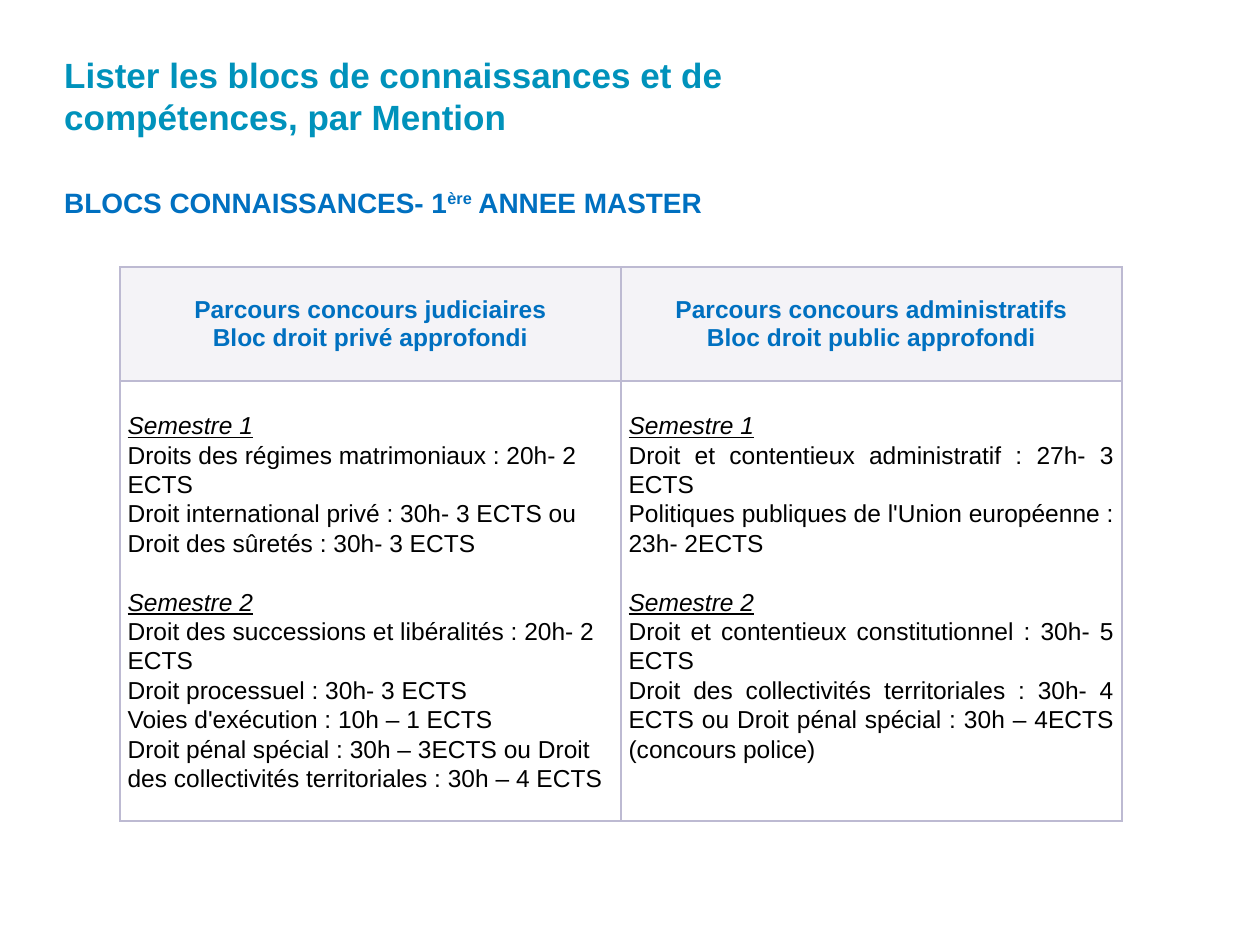
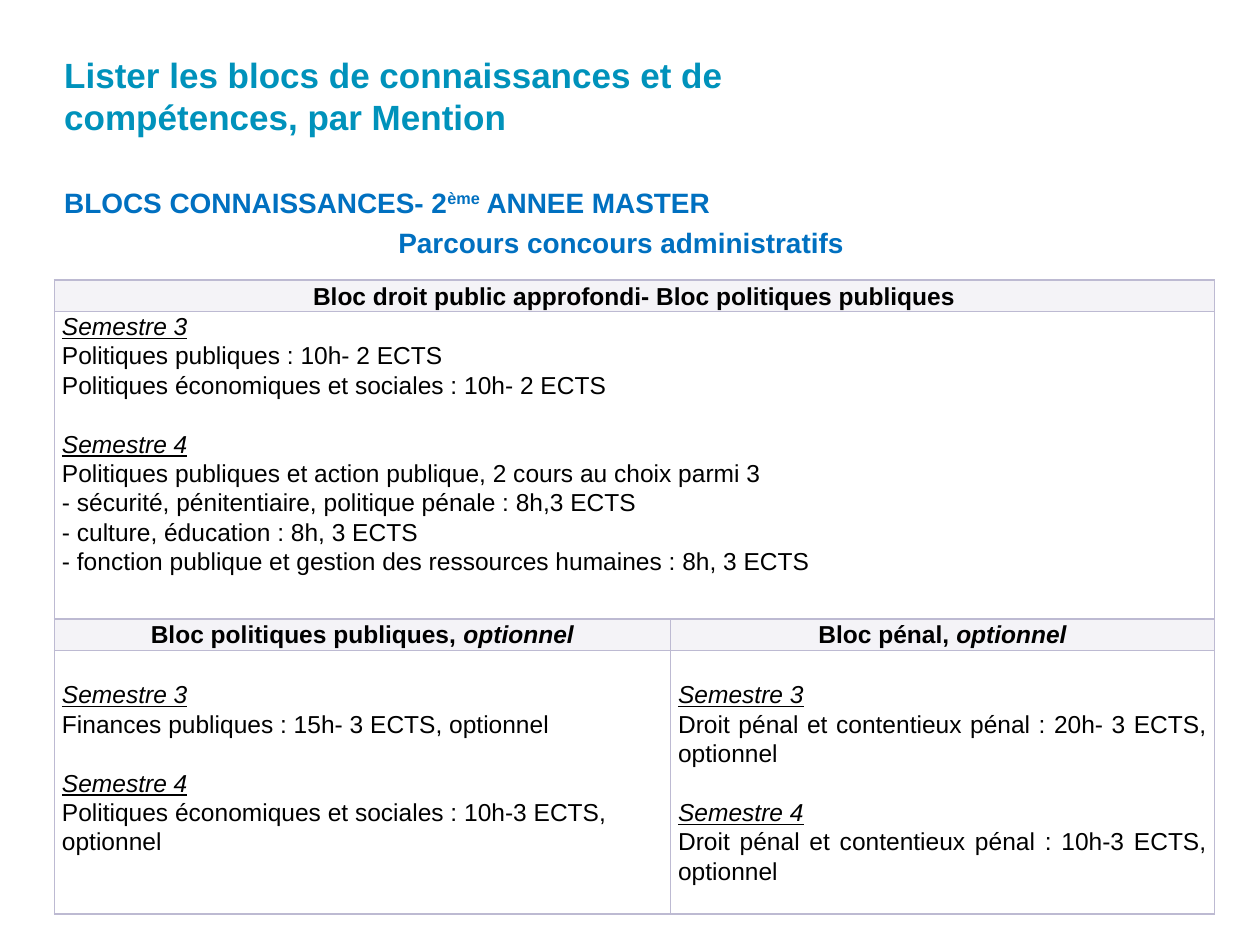
from lxml import etree
from pptx import Presentation
from pptx.dml.color import RGBColor
from pptx.enum.text import MSO_ANCHOR as Anchor, PP_ALIGN as Align
from pptx.oxml.ns import qn
from pptx.util import Pt

FONT = "Arial"
TEAL, BLUE, BLACK = "0092BB", "0070C0", "000000"
PALE, WHITE, EDGE = "F4F3F7", "FFFFFF", "BDBAD2"
LEFT, LINE, INSET = 36.7, 16.8, 4.4
TITLE = "Lister les blocs de connaissances et de compétences, par Mention"


def tint(code):
    """Turn a hex string into a colour."""
    return RGBColor.from_string(code)


def add_run(para, text, size, color, style=""):
    """Add one run; style letters are b, i, u and ^ for superscript."""
    run = para.add_run()
    run.text = text
    font = run.font
    font.name, font.size = FONT, Pt(size)
    font.color.rgb = tint(color)
    font.bold, font.italic, font.underline = (key in style for key in "biu")
    if "^" in style:
        run._r.get_or_add_rPr().set("baseline", "30000")


def add_para(frame, runs, size, color, align=Align.LEFT, gap=0, pitch=None):
    """Fill the first free paragraph of a frame with (text, style) runs."""
    first = frame.paragraphs[0]
    para = frame.add_paragraph() if first.runs else first
    para.alignment = align
    para.space_before = Pt(gap)
    if pitch:
        para.line_spacing = pitch
    for text, style in runs:
        add_run(para, text, size, color, style)


def strip(frame):
    """Make a frame wrap with no insets."""
    frame.word_wrap = True
    frame.margin_left = frame.margin_right = 0
    frame.margin_top = frame.margin_bottom = 0


def add_page(deck, year, mark, path_name=None):
    """Add a slide with the shared title and its year heading."""
    page = deck.slides.add_slide(deck.slide_layouts[5])
    title = page.shapes.title
    title.left, title.top, title.width, title.height = map(Pt, (LEFT, 3.6, 465, 102.2))
    strip(title.text_frame)
    title.text_frame.vertical_anchor = Anchor.MIDDLE
    add_para(title.text_frame, [(TITLE, "b")], 20, TEAL)
    box = page.shapes.add_textbox(*map(Pt, (LEFT, 105.8, 636.5, 430.5)))
    strip(box.text_frame)
    heading = [("BLOCS CONNAISSANCES- " + year, "b"), (mark, "b^"), (" ANNEE MASTER", "b")]
    add_para(box.text_frame, heading, 16, BLUE)
    if path_name:
        add_para(box.text_frame, [(path_name, "b")], 16, BLUE, Align.CENTER, 3.7)
    return page


def add_grid(page, left, top, cols, rows):
    """Add a bordered table with the given column widths and row heights."""
    frame = page.shapes.add_table(len(rows), len(cols), *map(Pt, (left, top, sum(cols), sum(rows))))
    grid = frame.table
    grid.first_row = grid.horz_banding = False
    for col, width in zip(grid.columns, cols):
        col.width = Pt(width)
    for row, height in zip(grid.rows, rows):
        row.height = Pt(height)
        for cell in row.cells:
            set_edges(cell)
    return grid


def set_edges(cell):
    """Draw the four borders of a cell."""
    props = cell._tc.get_or_add_tcPr()
    for side in ("lnL", "lnR", "lnT", "lnB"):
        line = etree.SubElement(props, qn("a:" + side), w=str(Pt(1)))
        fill = etree.SubElement(line, qn("a:solidFill"))
        etree.SubElement(fill, qn("a:srgbClr"), val=EDGE)


def set_cell(cell, fill, top=0):
    """Set the fill and insets of a cell and return its frame."""
    cell.fill.solid()
    cell.fill.fore_color.rgb = tint(fill)
    cell.margin_left = cell.margin_right = Pt(INSET)
    cell.margin_top, cell.margin_bottom = Pt(top), 0
    return cell.text_frame


def fill_head(cell, lines, color=BLACK, pitch=1.07):
    """Write centred bold lines in a heading cell."""
    frame = set_cell(cell, PALE)
    cell.vertical_anchor = Anchor.MIDDLE
    for runs in lines:
        add_para(frame, runs, 14, color, Align.CENTER, pitch=pitch)


def fill_body(cell, terms, align=Align.LEFT, top=LINE):
    """Write each semester and its courses in a body cell."""
    frame = set_cell(cell, WHITE, top)
    for index, (term, courses) in enumerate(terms.items()):
        add_para(frame, [(term, "iu")], 14, BLACK, align, LINE if index else 0, 1.07)
        for course in courses:
            add_para(frame, [(course, "")], 14, BLACK, align, pitch=1.07)


def first_year(deck):
    """Build the first-year slide."""
    page = add_page(deck, "1", "ère")
    grid = add_grid(page, 68.5, 152.6, [286.3] * 2, [65.2, 251.4])
    heads = [
        ("Parcours concours judiciaires", "Bloc droit privé approfondi"),
        ("Parcours concours administratifs", "Bloc droit public approfondi"),
    ]
    for col, lines in enumerate(heads):
        fill_head(grid.cell(0, col), [[(line, "b")] for line in lines], BLUE, 1.0)
    fill_body(grid.cell(1, 0), {
        "Semestre 1": [
            "Droits des régimes matrimoniaux : 20h- 2 ECTS",
            "Droit international privé : 30h- 3 ECTS ou Droit des sûretés : 30h- 3 ECTS",
        ],
        "Semestre 2": [
            "Droit des successions et libéralités : 20h- 2 ECTS",
            "Droit processuel : 30h- 3 ECTS",
            "Voies d'exécution : 10h – 1 ECTS",
            "Droit pénal spécial : 30h – 3ECTS ou Droit des collectivités territoriales : 30h – 4 ECTS",
        ],
    })
    fill_body(grid.cell(1, 1), {
        "Semestre 1": [
            "Droit et contentieux administratif : 27h- 3 ECTS",
            "Politiques publiques de l'Union européenne : 23h- 2ECTS",
        ],
        "Semestre 2": [
            "Droit et contentieux constitutionnel : 30h- 5 ECTS",
            "Droit des collectivités territoriales : 30h- 4 ECTS ou "
            "Droit pénal spécial : 30h – 4ECTS (concours police)",
        ],
    }, Align.JUSTIFY)


def second_year(deck):
    """Build the second-year slide."""
    page = add_page(deck, "2", "ème", "Parcours concours administratifs")
    grid = add_grid(page, 31, 159.9, [352.1, 311], [LINE, 175.7, LINE, 150.6])
    for row in (0, 1):
        grid.cell(row, 0).merge(grid.cell(row, 1))
    fill_head(grid.cell(0, 0), [[("Bloc droit public approfondi- Bloc politiques publiques", "b")]])
    fill_body(grid.cell(1, 0), {
        "Semestre 3": [
            "Politiques publiques : 10h- 2 ECTS",
            "Politiques économiques et sociales : 10h- 2 ECTS",
        ],
        "Semestre 4": [
            "Politiques publiques et action publique, 2 cours au choix parmi 3",
            "- sécurité, pénitentiaire, politique pénale : 8h,3 ECTS",
            "- culture, éducation : 8h, 3 ECTS",
            "- fonction publique et gestion des ressources humaines : 8h, 3 ECTS",
        ],
    }, top=0)
    for col, name in enumerate(("Bloc politiques publiques, ", "Bloc pénal, ")):
        fill_head(grid.cell(2, col), [[(name, "b"), ("optionnel", "bi")]])
    fill_body(grid.cell(3, 0), {
        "Semestre 3": ["Finances publiques : 15h- 3 ECTS, optionnel"],
        "Semestre 4": ["Politiques économiques et sociales : 10h-3 ECTS, optionnel"],
    })
    fill_body(grid.cell(3, 1), {
        "Semestre 3": ["Droit pénal et contentieux pénal : 20h- 3 ECTS, optionnel"],
        "Semestre 4": ["Droit pénal et contentieux pénal : 10h-3 ECTS, optionnel"],
    }, Align.JUSTIFY)


def main():
    """Build and save the deck."""
    deck = Presentation()
    deck.slide_width, deck.slide_height = Pt(720), Pt(540)
    first_year(deck)
    second_year(deck)
    deck.save("out.pptx")


if __name__ == "__main__":
    main()
